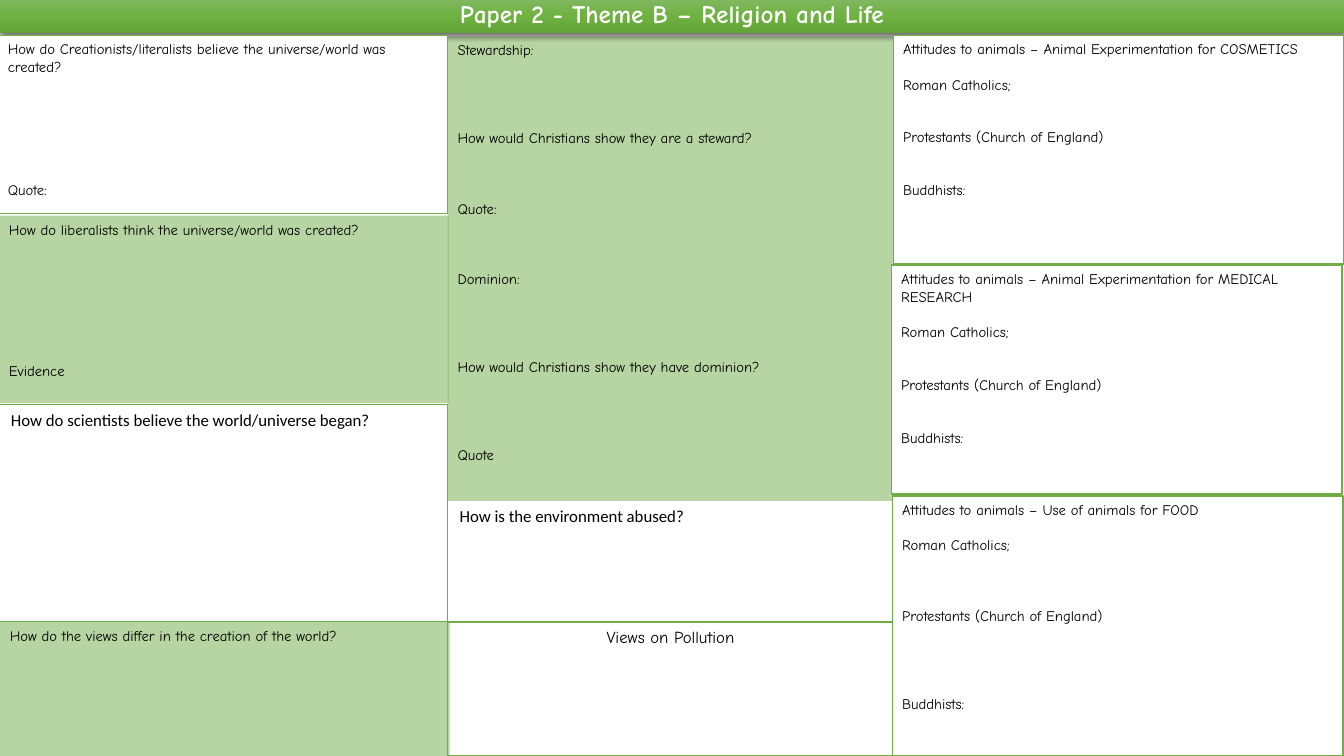
from lxml import etree
from pptx import Presentation, util as u
from pptx.dml.color import RGBColor
from pptx.enum import shapes, text
from pptx.oxml.ns import qn

GREEN, WHITE, BLACK = "70AD47", "FFFFFF", "000000"
HAND, PLAIN = "Comic Neue", "Calibri"
LINE_PITCH = 12.57
FAITHS = ("Roman Catholics;", "Protestants (Church of England)", "Buddhists:")


def paint(colour_format, colour):
    """Set a hex colour on a fill, line or font colour."""
    colour_format.rgb = RGBColor.from_string(colour)


def add_panel(slide, box, fill=None, alpha=None, line=None):
    """Draw one rectangle with optional fill, fill opacity and line width."""
    panel = slide.shapes.add_shape(shapes.MSO_SHAPE.RECTANGLE, *map(u.Inches, box))
    panel.shadow.inherit = False
    if fill:
        panel.fill.solid()
        paint(panel.fill.fore_color, fill)
    else:
        panel.fill.background()
    if alpha:
        colour = panel.fill._xPr.find(qn("a:solidFill"))[0]
        etree.SubElement(colour, qn("a:alpha")).set("val", str(alpha * 1000))
    if line:
        paint(panel.line.color, GREEN)
        panel.line.width = u.Pt(line)
    else:
        panel.line.fill.background()
    return panel


def write(shape, prompts, size=10.5, font=HAND, colour=BLACK, bold=False,
          align=text.PP_ALIGN.LEFT, anchor=text.MSO_ANCHOR.TOP):
    """Write prompts, each a pair of wording and answer lines left above it."""
    frame = shape.text_frame
    frame.word_wrap = True
    frame.vertical_anchor = anchor
    for index, (wording, gap) in enumerate(prompts):
        paragraph = frame.add_paragraph() if index else frame.paragraphs[0]
        paragraph.alignment = align
        if gap:
            paragraph.space_before = u.Pt(round(gap * LINE_PITCH, 2))
        run = paragraph.add_run()
        run.text = wording
        run.font.size, run.font.name, run.font.bold = u.Pt(size), font, bold
        paint(run.font.color, colour)


def add_title(slide, box):
    """Draw the shaded title band."""
    band = add_panel(slide, box, GREEN)
    band.fill.gradient()
    band.fill.gradient_angle = 270
    stops = band.fill._xPr.find(qn("a:gradFill")).find(qn("a:gsLst"))
    for stop in list(stops):
        stops.remove(stop)
    for position, colour in ((0, "81B861"), (50, "6FB242"), (100, "62A336")):
        stop = etree.SubElement(stops, qn("a:gs"), pos=str(position * 1000))
        etree.SubElement(stop, qn("a:srgbClr"), val=colour)
    effects = band._element.spPr.find(qn("a:effectLst"))
    shadow = etree.SubElement(effects, qn("a:outerShdw"), blurRad=str(u.Pt(4.5)),
                              dist=str(u.Pt(1.5)), dir="5400000", rotWithShape="0")
    tint = etree.SubElement(shadow, qn("a:srgbClr"), val=BLACK)
    etree.SubElement(tint, qn("a:alpha"), val="63000")
    write(band, [("Paper 2 - Theme B – Religion and Life", 0)], 18, colour=WHITE,
          bold=True, align=text.PP_ALIGN.CENTER, anchor=text.MSO_ANCHOR.MIDDLE)
    band.text_frame.paragraphs[0].line_spacing = 0.9


def add_green(slide, box, prompts):
    """Draw a pale green question panel."""
    write(add_panel(slide, box, GREEN, alpha=50), prompts)


def add_white(slide, box, prompts, **style):
    """Draw a white question panel with a green outline."""
    write(add_panel(slide, box, WHITE, line=1), prompts, **style)


def add_question(slide, box, question):
    """Place a loose question without a panel."""
    label = slide.shapes.add_textbox(*map(u.Inches, box))
    write(label, [(question, 0)], 12, PLAIN)


def add_attitudes(slide, box, topic, gaps):
    """Draw an animal attitudes panel with a prompt for each faith."""
    heading = (f"Attitudes to animals – {topic}", 0)
    add_white(slide, box, [heading, *zip(FAITHS, gaps)])


def build_sheet(slide):
    """Place every region of the revision sheet."""
    add_white(slide, (4.44, 6.17, 4.42, 1.33), [("Views on Pollution", 0)],
              size=12, align=text.PP_ALIGN.CENTER)
    add_green(slide, (4.44, 0.36, 4.42, 4.61), [
        ("Stewardship:", 0),
        ("How would Christians show they are a steward?", 4),
        ("Quote:", 3),
        ("Dominion:", 3),
        ("How would Christians show they have dominion?", 4),
        ("Quote", 4)])
    add_title(slide, (0, -0.02, 13.33, 0.35))
    add_white(slide, (-0.02, 0.35, 4.46, 1.77), [
        ("How do Creationists/literalists believe the universe/world was created?", 0),
        ("Quote:", 6)])
    add_green(slide, (-0.01, 2.14, 4.46, 1.86), [
        ("How do liberalists think the universe/world was created?", 0),
        ("Evidence", 7)])
    add_attitudes(slide, (8.86, 0.35, 4.47, 2.27),
                  "Animal Experimentation for COSMETICS", (1, 2, 2))
    add_green(slide, (0, 6.17, 4.46, 1.33),
              [("How do the views differ in the creation of the world?", 0)])
    add_panel(slide, (0, 4.01, 4.44, 2.16), line=0.75)
    add_question(slide, (0.01, 4.02, 4.4, 0.3),
                 "How do scientists believe the world/universe began?")
    add_question(slide, (4.46, 4.97, 2.59, 1.31), "How is the environment abused?")
    add_attitudes(slide, (8.84, 2.63, 4.47, 2.27),
                  "Animal Experimentation for MEDICAL RESEARCH", (1, 2, 2))
    add_attitudes(slide, (8.85, 4.92, 4.47, 2.58),
                  "Use of animals for FOOD", (1, 3, 4))


def main():
    """Build and save the sheet."""
    deck = Presentation()
    deck.slide_width, deck.slide_height = u.Inches(13.33), u.Inches(7.5)
    build_sheet(deck.slides.add_slide(deck.slide_layouts[6]))
    deck.save("out.pptx")


if __name__ == "__main__":
    main()
